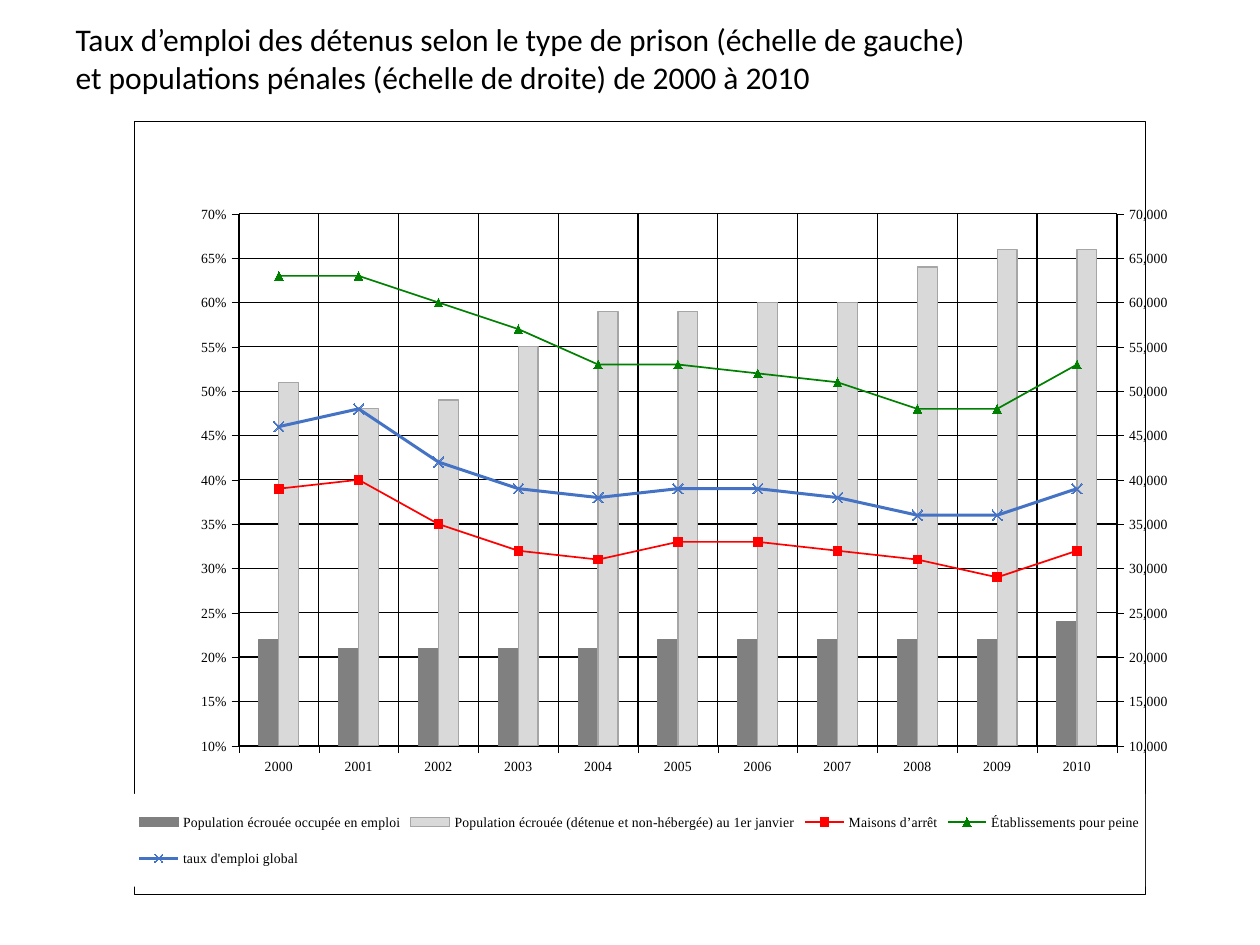
"""Build a slide with a combined chart of prison employment rates and populations."""
from copy import deepcopy

from lxml import etree
from pptx import Presentation
from pptx.chart.axis import ValueAxis
from pptx.chart.data import CategoryChartData
from pptx.dml.color import RGBColor
from pptx.enum.chart import XL_CHART_TYPE, XL_LEGEND_POSITION, XL_MARKER_STYLE, XL_TICK_MARK
from pptx.enum.text import MSO_ANCHOR, MSO_AUTO_SIZE, PP_ALIGN
from pptx.oxml import parse_xml
from pptx.oxml.ns import nsdecls, qn
from pptx.util import Inches, Pt

BARS = XL_CHART_TYPE.COLUMN_CLUSTERED
BOTTOM = XL_LEGEND_POSITION.BOTTOM
OUT, NONE = XL_TICK_MARK.OUTSIDE, XL_TICK_MARK.NONE
SQUARE, TRIANGLE, CROSS = XL_MARKER_STYLE.SQUARE, XL_MARKER_STYLE.TRIANGLE, XL_MARKER_STYLE.X
TOP, LEFT = MSO_ANCHOR.TOP, PP_ALIGN.LEFT
FIXED = MSO_AUTO_SIZE.NONE

HEX = {"black": "000000", "white": "FFFFFF", "dark": "808080", "light": "D9D9D9",
       "edge": "A6A6A6", "red": "FF0000", "green": "008000", "blue": "4472C4"}
INK = {name: RGBColor.from_string(code) for name, code in HEX.items()}
WIDE, HIGH = Inches(10), Inches(7.5)
SERIF = "Times New Roman"

BAR_ROWS = [
    ("Population écrouée occupée en emploi", "dark", "dark",
     [22, 21, 21, 21, 21, 22, 22, 22, 22, 22, 24]),
    ("Population écrouée (détenue et non-hébergée) au 1er janvier", "light", "edge",
     [51, 48, 49, 55, 59, 59, 60, 60, 64, 66, 66]),
]
LINE_ROWS = [
    ("Maisons d’arrêt", "red", 1, SQUARE, 5,
     [39, 40, 35, 32, 31, 33, 33, 32, 31, 29, 32]),
    ("Établissements pour peine", "green", 1, TRIANGLE, 5,
     [63, 63, 60, 57, 53, 53, 52, 51, 48, 48, 53]),
    ("taux d'emploi global", "blue", 1.75, CROSS, 6,
     [46, 48, 42, 39, 38, 39, 39, 38, 36, 36, 39]),
]


def set_font(font, size, face):
    font.size, font.name = Pt(size), face
    font.color.rgb = INK["black"]


def set_line(line, color, width):
    line.color.rgb = INK[color]
    line.width = Pt(width)


deck = Presentation()
deck.slide_width, deck.slide_height = WIDE, HIGH
slide = deck.slides.add_slide(deck.slide_layouts[5])

title = slide.shapes.title
title.left, title.top = int(WIDE * 0.05), Inches(0.1)
title.width, title.height = int(WIDE * 0.9), Inches(0.86)
frame = title.text_frame
frame.word_wrap, frame.auto_size, frame.vertical_anchor = True, FIXED, TOP
para = frame.paragraphs[0]
para.alignment, para.line_spacing = LEFT, 1.02
for row, text in enumerate(["Taux d’emploi des détenus selon le type de prison (échelle de gauche) ",
                            "et populations pénales (échelle de droite) de 2000 à 2010"]):
    if row:
        para.add_line_break()
    run = para.add_run()
    run.text = text
    set_font(run.font, 18, "Calibri")

data = CategoryChartData()
data.categories = [str(year) for year in range(2000, 2011)]
for name, *_, vals in BAR_ROWS:
    data.add_series(name, [val * 1000 for val in vals], "#,##0")
for name, *_, vals in LINE_ROWS:
    data.add_series(name, [val / 100 for val in vals], "0%")
chart = slide.shapes.add_chart(BARS, Inches(1.06), Inches(0.96),
                               Inches(8.21), Inches(6.14), data).chart
chart.has_title = False
set_font(chart.font, 10.2, "Arial")
area = chart.plots[0]
area.gap_width, area.overlap, area.vary_by_categories = 202, 0, False

years, right = chart.category_axis, chart.value_axis
plot_xml = years._element.getparent()
bar_xml = plot_xml.find(qn("c:barChart"))
line_xml = parse_xml(f'<c:lineChart {nsdecls("c")}><c:grouping val="standard"/>'
                     '<c:varyColors val="0"/></c:lineChart>')
for item in bar_xml.findall(qn("c:ser"))[len(BAR_ROWS):]:
    for flag in item.findall(qn("c:invertIfNegative")):
        item.remove(flag)
    line_xml.append(item)
for tag, val in [("marker", "1"), ("axId", "501"), ("axId", "502")]:
    etree.SubElement(line_xml, qn(f"c:{tag}")).set("val", val)
bar_xml.addnext(line_xml)

cat_xml, val_xml = deepcopy(years._element), deepcopy(right._element)
for axis, own, other in [(cat_xml, "501", "502"), (val_xml, "502", "501")]:
    axis.find(qn("c:axId")).set("val", own)
    axis.find(qn("c:crossAx")).set("val", other)
right._element.addnext(val_xml)
val_xml.addnext(cat_xml)
cat_xml.find(qn("c:delete")).set("val", "1")
right._element.find(qn("c:crosses")).set("val", "max")
right._element.find(qn("c:axPos")).set("val", "r")
left = ValueAxis(val_xml)

for axis, form, unit in [(right, "#,##0", 1000), (left, "0%", 0.01)]:
    axis.minimum_scale, axis.maximum_scale, axis.major_unit = 10 * unit, 70 * unit, 5 * unit
    axis.tick_labels.number_format = form
    axis.tick_labels.number_format_is_linked = False
left.has_major_gridlines = False
for axis in (years, right):
    axis.has_major_gridlines = True
    set_line(axis.major_gridlines.format.line, "black", 0.75)
for axis in (years, right, left):
    axis.major_tick_mark, axis.minor_tick_mark = OUT, NONE
    set_font(axis.tick_labels.font, 8, SERIF)
    set_line(axis.format.line, "black", 0.25)

for series, (_, fill, edge, _) in zip(chart.plots[0].series, BAR_ROWS):
    series.format.fill.solid()
    series.format.fill.fore_color.rgb = INK[fill]
    set_line(series.format.line, edge, 0.75)
for series, (_, color, width, style, size, _) in zip(chart.plots[1].series, LINE_ROWS):
    series.smooth = False
    set_line(series.format.line, color, width)
    mark = series.marker
    mark.style, mark.size = style, size
    set_line(mark.format.line, color, 0.75)
    if style == CROSS:
        mark.format.fill.background()
    else:
        mark.format.fill.solid()
        mark.format.fill.fore_color.rgb = INK[color]

chart.has_legend = True
legend = chart.legend
legend.position, legend.include_in_layout = BOTTOM, False
set_font(legend.font, 8, SERIF)

key_xml = legend._element
for owner, spot, target, box in [
        (plot_xml, 0, '<c:layoutTarget val="inner"/>', (0.104, 0.12, 0.868, 0.688)),
        (key_xml, 1, "", (0, 0.87, 1, 0.12))]:
    for old in owner.findall(qn("c:layout")):
        owner.remove(old)
    sides = "".join(f'<c:{tag} val="{val}"/>' for tag, val in zip("xywh", box))
    owner.insert(spot, parse_xml(
        f'<c:layout {nsdecls("c")}><c:manualLayout>{target}<c:xMode val="edge"/>'
        f'<c:yMode val="edge"/>{sides}</c:manualLayout></c:layout>'))

paint = f'<a:solidFill><a:srgbClr val="{HEX["white"]}"/></a:solidFill>'
border = f'<a:ln w="3175"><a:solidFill><a:srgbClr val="{HEX["black"]}"/></a:solidFill></a:ln>'
for spot, line in [(key_xml.find(qn("c:overlay")), "<a:ln><a:noFill/></a:ln>"),
                   (chart._chartSpace.find(qn("c:chart")), border)]:
    spot.addnext(parse_xml(f'<c:spPr {nsdecls("c", "a")}>{paint}{line}</c:spPr>'))

deck.save("out.pptx")
